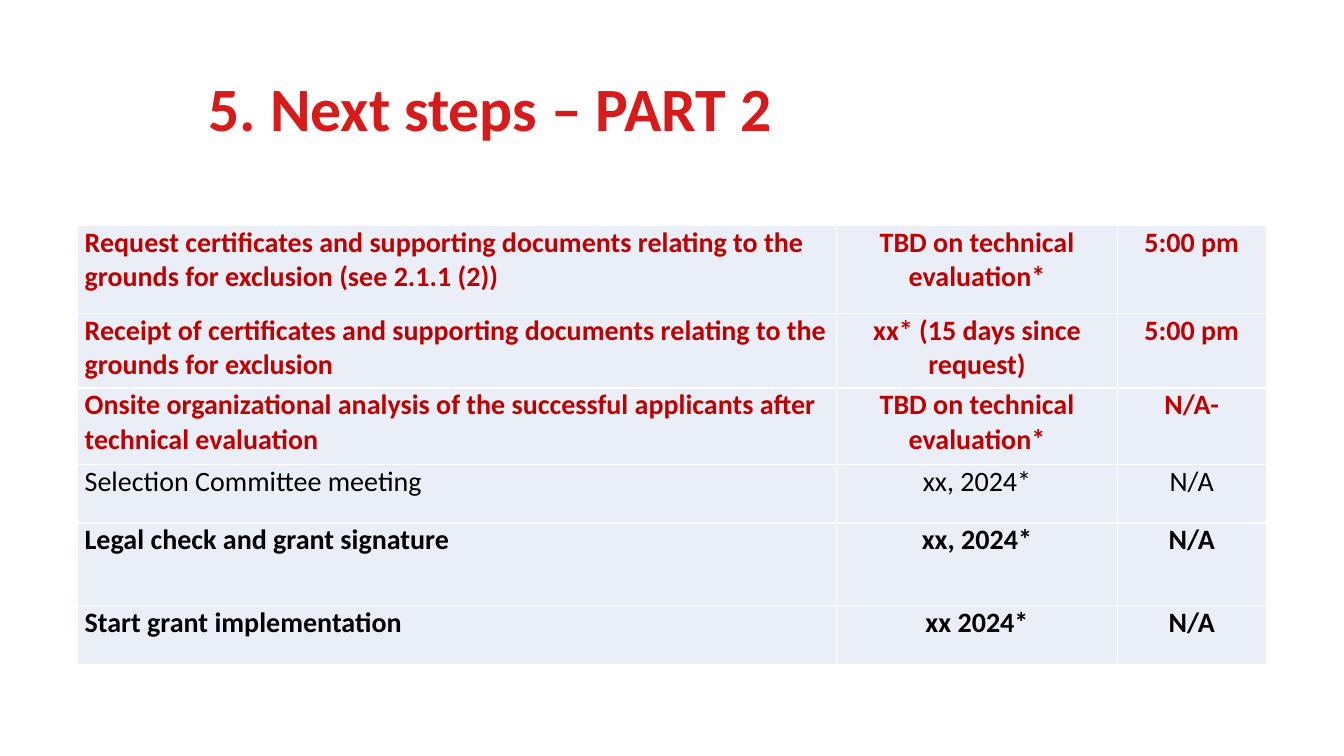
import pptx
import pptx.util
import pptx.dml.color
import pptx.enum.text
import lxml.etree

Inches = pptx.util.Inches
Pt = pptx.util.Pt
ALIGN = pptx.enum.text.PP_ALIGN
ANCHOR = pptx.enum.text.MSO_ANCHOR

RED, BLACK, WHITE, PALE = "C00000", "000000", "FFFFFF", "EAEFF7"
WIDTHS = [7.53, 2.78, 1.48]
# Row height, text colour, bold, cell texts
STEPS = [
    (0.87, RED, True, ["Request certificates and supporting documents relating to the "
                       "grounds for exclusion (see 2.1.1 (2))",
                       "TBD on technical evaluation*", "5:00 pm"]),
    (0.74, RED, True, ["Receipt of certificates and supporting documents relating to the "
                       "grounds for exclusion",
                       "xx* (15 days since request)", "5:00 pm"]),
    (0.76, RED, True, ["Onsite organizational analysis of the successful applicants after "
                       "technical evaluation",
                       "TBD on technical evaluation*", "N/A-"]),
    (0.58, BLACK, False, ["Selection Committee meeting", "xx, 2024*", "N/A"]),
    (0.82, BLACK, True, ["Legal check and grant signature", "xx, 2024*", "N/A"]),
    (0.58, BLACK, True, ["Start grant implementation", "xx 2024*", "N/A"]),
]


def color(code):
    return pptx.dml.color.RGBColor.from_string(code)


def add_run(para, text, size, code, bold):
    run = para.add_run()
    run.text = text
    font = run.font
    font.name = "Calibri"
    font.size = Pt(size)
    font.bold = bold
    font.color.rgb = color(code)


def set_title(slide, text):
    title = slide.shapes.title
    title.left, title.top = Inches(1.97), Inches(0.38)
    title.width, title.height = Inches(9.45), Inches(1.45)
    frame = title.text_frame
    frame.word_wrap = True
    frame.auto_size = pptx.enum.text.MSO_AUTO_SIZE.NONE
    frame.vertical_anchor = ANCHOR.MIDDLE
    para = frame.paragraphs[0]
    para.alignment = ALIGN.LEFT
    para.line_spacing = 0.9
    add_run(para, text, 44, "D81A1A", True)


def set_edges(cell, code):
    props = cell._tc.get_or_add_tcPr()
    space = pptx.oxml.ns.nsdecls("a")
    for spot, side in enumerate(["lnL", "lnR", "lnT", "lnB"]):
        # Edges come before the fill in the cell properties
        props.insert(spot, pptx.oxml.parse_xml(
            f'<a:{side} {space} w="{Pt(1)}"><a:solidFill>'
            f'<a:srgbClr val="{code}"/></a:solidFill></a:{side}>'))


def fill_cell(cell, text, code, bold, align):
    cell.margin_left = cell.margin_right = Inches(0.07)
    cell.margin_top = cell.margin_bottom = 0
    cell.vertical_anchor = ANCHOR.TOP
    cell.fill.solid()
    cell.fill.fore_color.rgb = color(PALE)
    set_edges(cell, WHITE)
    para = cell.text_frame.paragraphs[0]
    para.alignment = align
    add_run(para, text, 20, code, bold)


def add_steps(slide):
    high = sum(step[0] for step in STEPS)
    table = slide.shapes.add_table(
        len(STEPS), len(WIDTHS), Inches(0.77), Inches(2.24),
        Inches(sum(WIDTHS)), Inches(high)).table
    table.first_row = table.horz_banding = False
    for col, width in zip(table.columns, WIDTHS):
        col.width = Inches(width)
    for row, (height, code, bold, texts) in zip(table.rows, STEPS):
        row.height = Inches(height)
        for spot, (cell, text) in enumerate(zip(row.cells, texts)):
            align = ALIGN.CENTER if spot else ALIGN.LEFT
            fill_cell(cell, text, code, bold, align)


def main():
    deck = pptx.Presentation()
    deck.slide_width, deck.slide_height = Inches(13.33), Inches(7.5)
    # Title-only layout
    slide = deck.slides.add_slide(deck.slide_layouts[5])
    set_title(slide, "5. Next steps – PART 2")
    add_steps(slide)
    deck.save("out.pptx")


if __name__ == "__main__":
    main()
